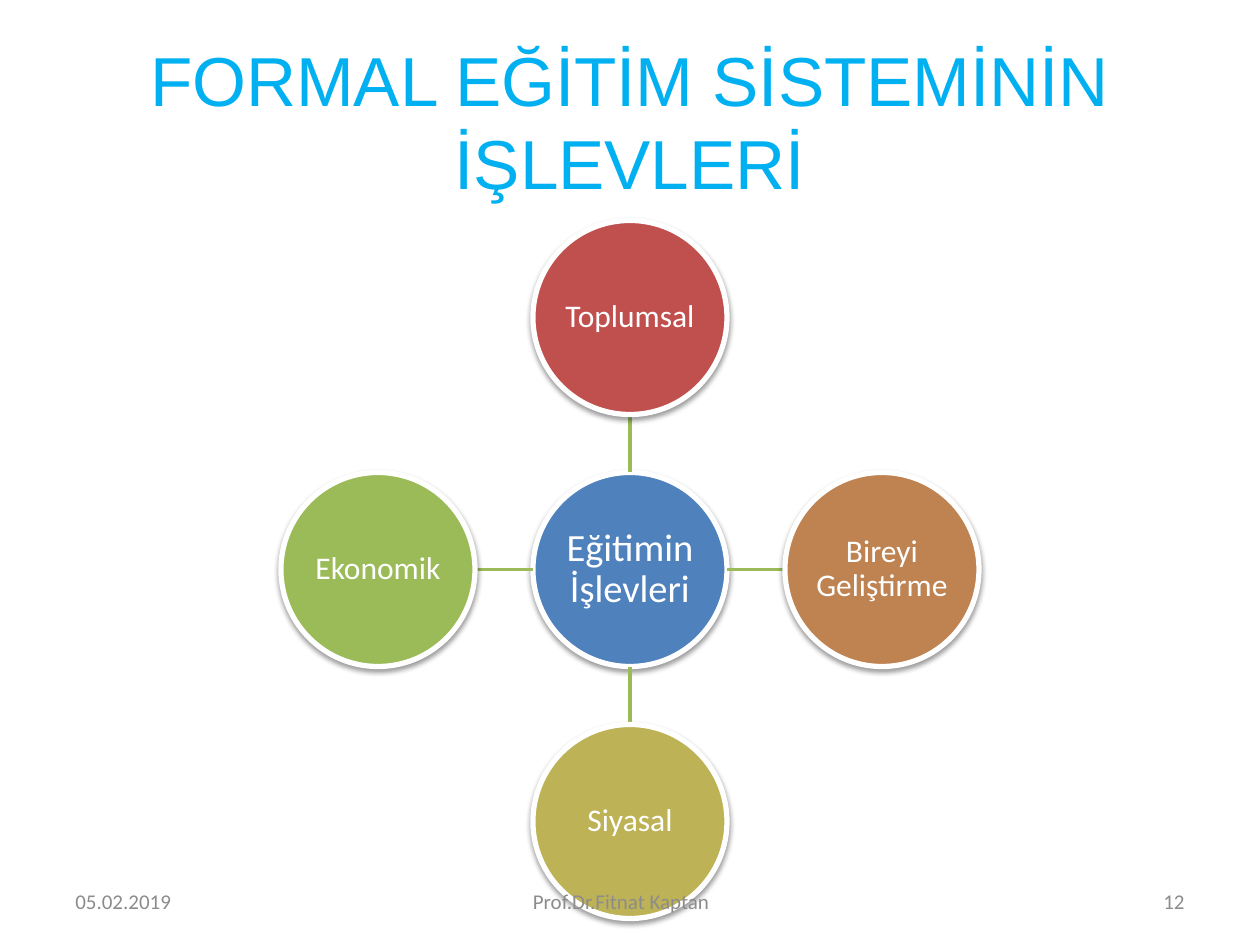
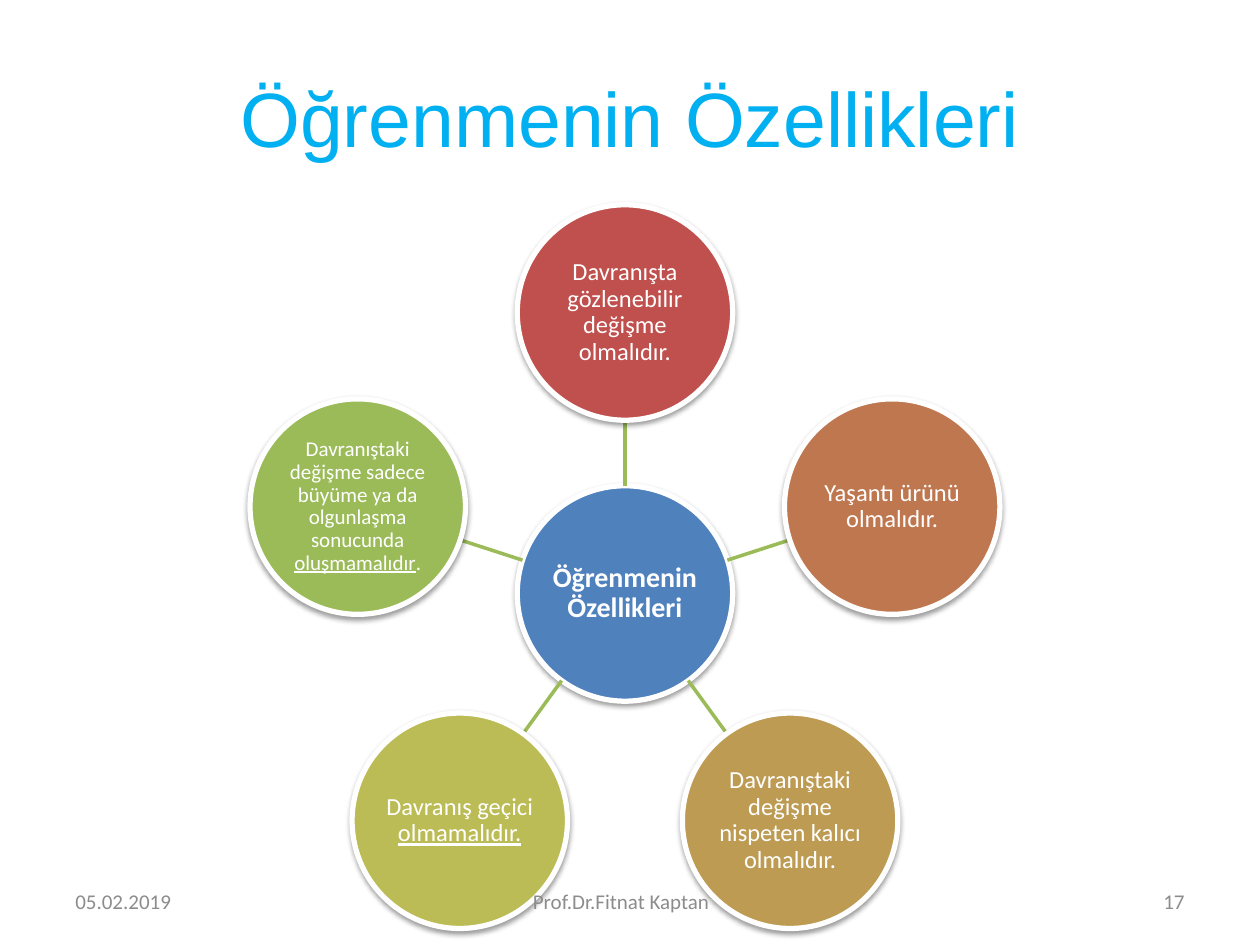
import math

import lxml.etree
import pptx
import pptx.dml.color
import pptx.enum.shapes
import pptx.enum.text
import pptx.oxml.ns
import pptx.util

Inches = pptx.util.Inches
ALIGN = pptx.enum.text.PP_ALIGN
COLORS = {
    "title": "00B0F0", "footer": "8C8C8C", "white": "FFFFFF", "shadow": "000000",
    "spoke": "9BBB59", "hub": "4F81BD", "red": "C0504D", "green": "9BBB59",
    "orange": "BE8351", "olive": "BDB255",
    "rust": "BF7750", "gold": "BD9B53", "lime": "BCBC56",
}
FOOTER_DATE = "05.02.2019"
FOOTER_AUTHOR = "Prof.Dr.Fitnat Kaptan"


def rgb(name):
    return pptx.dml.color.RGBColor.from_string(COLORS[name])


def set_line(shape, color, width):
    shape.line.color.rgb = rgb(color)
    shape.line.width = pptx.util.Pt(width)


def write(shape, spans, size, color, font="Calibri", align=ALIGN.CENTER,
          insets=(0.1, 0.05, 0.1, 0.05), spacing=1.0, bold=False):
    """Fill a shape with one paragraph of (text, underlined) spans."""
    frame = shape.text_frame
    left, top, right, bottom = map(Inches, insets)
    frame_format = {
        "word_wrap": True, "vertical_anchor": pptx.enum.text.MSO_ANCHOR.MIDDLE,
        "margin_left": left, "margin_top": top,
        "margin_right": right, "margin_bottom": bottom,
    }
    for name, value in frame_format.items():
        setattr(frame, name, value)
    para = frame.paragraphs[0]
    para.alignment, para.line_spacing = align, spacing
    for text, underlined in spans:
        span = para.add_run()
        span.text = text
        span_format = {"size": pptx.util.Pt(size), "name": font,
                       "bold": bold, "underline": underlined}
        for name, value in span_format.items():
            setattr(span.font, name, value)
        span.font.color.rgb = rgb(color)


def add_text(page, box, text, size, color, **options):
    shape = page.shapes.add_textbox(*map(Inches, box))
    write(shape, [(text, False)], size, color, **options)


def add_title(page, box, text, size):
    add_text(page, box, text, size, "title", font="Arial")


def add_footer(page, box, number):
    left, top, width, height = box
    side = 2.33
    add_text(page, (left, top, side, height), FOOTER_DATE, 12, "footer", align=ALIGN.LEFT)
    add_text(page, (left + 2.92, top, 3.17, height), FOOTER_AUTHOR, 12, "footer",
             insets=(0.1, 0.05, 0.25, 0.05))
    add_text(page, (left + width - side, top, side, height), str(number), 12, "footer",
             align=ALIGN.RIGHT)


def add_shadow(shape):
    shape.shadow.inherit = False
    qn = pptx.oxml.ns.qn
    effects = shape._element.spPr.find(qn("a:effectLst"))
    shadow = lxml.etree.SubElement(
        effects, qn("a:outerShdw"), blurRad=str(pptx.util.Pt(3.1)),
        dist=str(pptx.util.Pt(1.6)), dir="5400000", rotWithShape="0")
    tint = lxml.etree.SubElement(shadow, qn("a:srgbClr"), val=COLORS["shadow"])
    lxml.etree.SubElement(tint, qn("a:alpha"), val="38000")


def add_circle(page, center, diameter, color, spans, size, bold=False):
    x, y = center
    circle = page.shapes.add_shape(
        pptx.enum.shapes.MSO_SHAPE.OVAL, Inches(x - diameter / 2),
        Inches(y - diameter / 2), Inches(diameter), Inches(diameter))
    circle.fill.solid()
    circle.fill.fore_color.rgb = rgb(color)
    set_line(circle, "white", 3)
    add_shadow(circle)
    write(circle, spans, size, "white", insets=(0.01,) * 4, spacing=0.9, bold=bold)


def add_spoke(page, start, end):
    spoke = page.shapes.add_connector(
        pptx.enum.shapes.MSO_CONNECTOR.STRAIGHT, *map(Inches, start + end))
    set_line(spoke, "spoke", 2)
    lxml.etree.SubElement(spoke._element.spPr, pptx.oxml.ns.qn("a:effectLst"))


def add_radial(page, center, diameter, ring, hub, satellites):
    """Place satellites clockwise from the top, evenly spaced around the hub."""
    x, y = center
    add_circle(page, center, diameter, "hub", **hub)
    for index, (color, size, spans) in enumerate(satellites):
        angle = 2 * math.pi * index / len(satellites)

        def at(radius):
            return x + radius * math.sin(angle), y - radius * math.cos(angle)

        add_spoke(page, at(diameter / 2), at(ring - diameter / 2))
        add_circle(page, at(ring), diameter, color, spans, size)


def add_functions_slide(page):
    add_radial(
        page, (5, 4.52), 1.54, 2,
        {"spans": [("Eğitimin İşlevleri", False)], "size": 22},
        [("red", 18, [("Toplumsal", False)]),
         ("orange", 18, [("Bireyi Geliştirme", False)]),
         ("olive", 18, [("Siyasal", False)]),
         ("green", 18, [("Ekonomik", False)])])
    add_title(page, (0.5, 0.36, 9, 1.19), "FORMAL EĞİTİM SİSTEMİNİN İŞLEVLERİ", 39.6)


def add_learning_slide(page):
    add_radial(
        page, (4.96, 4.71), 1.71, 2.23,
        {"spans": [("Öğrenmenin Özellikleri", False)], "size": 16, "bold": True},
        [("red", 14, [("Davranışta gözlenebilir değişme olmalıdır.", False)]),
         ("rust", 14, [("Yaşantı ürünü olmalıdır.", False)]),
         ("gold", 14, [("Davranıştaki değişme nispeten kalıcı olmalıdır.", False)]),
         ("lime", 14, [("Davranış geçici ", False), ("olmamalıdır.", True)]),
         ("green", 12, [("Davranıştaki değişme sadece büyüme ya da olgunlaşma sonucunda ", False),
                        ("oluşmamalıdır", True), (".", False)])])
    add_title(page, (0.5, 0.3, 9, 1.25), "Öğrenmenin Özellikleri", 44)


def main():
    deck = pptx.Presentation()
    deck.slide_width, deck.slide_height = Inches(10), Inches(7.5)
    for build, number in ((add_functions_slide, 12), (add_learning_slide, 17)):
        page = deck.slides.add_slide(deck.slide_layouts[6])
        build(page)
        add_footer(page, (0.5, 6.95, 9, 0.4), number)
    deck.save("out.pptx")


if __name__ == "__main__":
    main()
